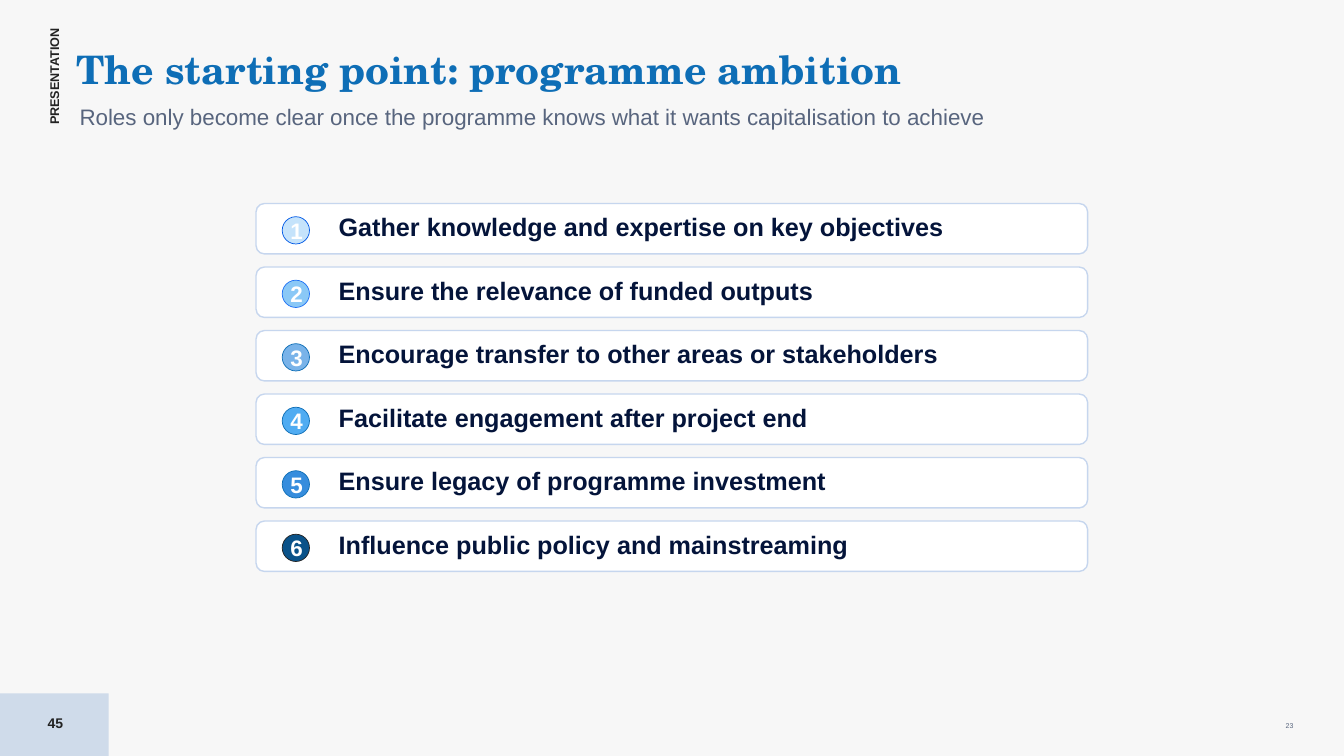
from pptx import Presentation
from pptx.util import Pt
from pptx.dml.color import RGBColor as Rgb
from pptx.enum.shapes import MSO_SHAPE as Kind
from pptx.enum.text import MSO_ANCHOR as Anchor, PP_ALIGN as Align, MSO_AUTO_SIZE as Fit

TITLE = "The starting point: programme ambition"
LEAD = "Roles only become clear once the programme knows what it wants capitalisation to achieve"
LABEL = "PRESENTATION"
PAGE, COUNT = "45", "23"

GOALS = [
    ("Gather knowledge and expertise on key objectives", "C5E3FB", "0059E6"),
    ("Ensure the relevance of funded outputs", "8AC8F6", "1D70F5"),
    ("Encourage transfer to other areas or stakeholders", "79B3E9", "0E6EB6"),
    ("Facilitate engagement after project end", "50ACF2", "0E6EB6"),
    ("Ensure legacy of programme investment", "368DDD", "0E6EB6"),
    ("Influence public policy and mainstreaming", "0A5289", "222222"),
]

THEME = {
    "serif": "TeX Gyre Schola", "sans": "Arial",
    "back": "F7F7F7", "band": "CFDBEA", "card": "FFFFFF", "edge": "C6D6EE",
    "dark": "222222", "blue": "0E6EB6", "grey": "58657E", "navy": "04143A",
    "title": 28, "goal": 18, "lead": 16, "page": 10, "label": 9, "count": 5,
}

WIDE, HIGH = 960, 540
LEFT, TOP, STEP = 182.9, 145.4, 45.36
CARD_W, CARD_H = 594, 36
DOT = 19.5


def draw(slide, kind, box, fill, edge=None, width=1):
    shape = slide.shapes.add_shape(kind, *map(Pt, box))
    shape.shadow.inherit = False
    shape.fill.solid()
    shape.fill.fore_color.rgb = Rgb.from_string(fill)
    if edge:
        shape.line.color.rgb = Rgb.from_string(edge)
        shape.line.width = Pt(width)
    else:
        shape.line.fill.background()


def write(slide, text, box, size, color, bold=True, face="sans", pad=0,
          align=Align.LEFT, anchor=Anchor.TOP, wrap=True):
    area = slide.shapes.add_textbox(*map(Pt, box))
    frame = area.text_frame
    frame.text = text
    frame.word_wrap = wrap
    frame.auto_size = Fit.NONE
    frame.vertical_anchor = anchor
    frame.margin_left = frame.margin_right = Pt(pad)
    frame.margin_top = frame.margin_bottom = Pt(pad)
    line = frame.paragraphs[0]
    line.alignment = align
    font = line.runs[0].font
    font.name, font.size, font.bold = THEME[face], Pt(THEME[size]), bold
    font.color.rgb = Rgb.from_string(THEME[color])
    return area


def main():
    deck = Presentation()
    deck.slide_width, deck.slide_height = Pt(WIDE), Pt(HIGH)
    slide = deck.slides.add_slide(deck.slide_layouts[6])
    back = slide.background.fill
    back.solid()
    back.fore_color.rgb = Rgb.from_string(THEME["back"])

    draw(slide, Kind.RECTANGLE, (0, 495.3, 77.6, 44.7), THEME["band"])
    side = write(slide, LABEL, (2.9, 48.2, 71.3, 10.8), "label", "dark", wrap=False)
    side.rotation = 270
    write(slide, PAGE, (0, 502, 79, 29), "page", "dark",
          align=Align.CENTER, anchor=Anchor.MIDDLE)
    write(slide, TITLE, (54.7, 32.4, 842, 32.4), "title", "blue", face="serif")
    write(slide, LEAD, (55.4, 72, 814, 22.3), "lead", "grey", bold=False, pad=1.44)

    for row, (goal, fill, edge) in enumerate(GOALS):
        top = TOP + row * STEP
        dot = (LEFT + 18.7, top + 9.4, DOT, DOT)
        draw(slide, Kind.ROUNDED_RECTANGLE, (LEFT, top, CARD_W, CARD_H),
             THEME["card"], THEME["edge"])
        draw(slide, Kind.OVAL, dot, fill, edge, 0.5)
        write(slide, str(row + 1), (dot[0] + 0.5, *dot[1:]), "lead", "card",
              align=Align.CENTER)
        write(slide, goal, (LEFT + 57.6, top + 4.3, 525.6, 24.5), "goal", "navy",
              pad=1.44, anchor=Anchor.MIDDLE)

    write(slide, COUNT, (915.8, 514, 10.8, 10.8), "count", "grey", bold=False,
          pad=1.44, align=Align.CENTER)
    deck.save("out.pptx")


if __name__ == "__main__":
    main()
